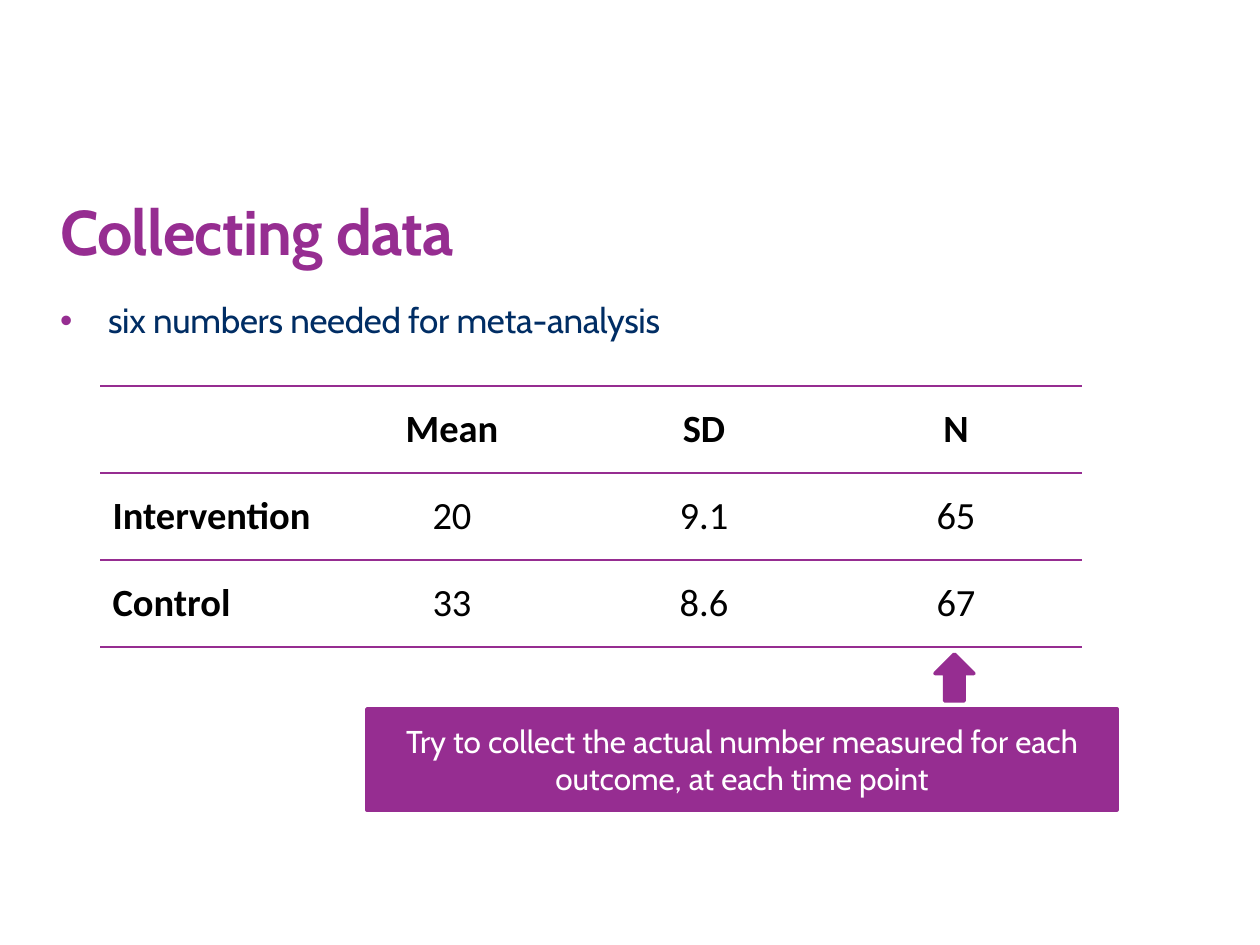
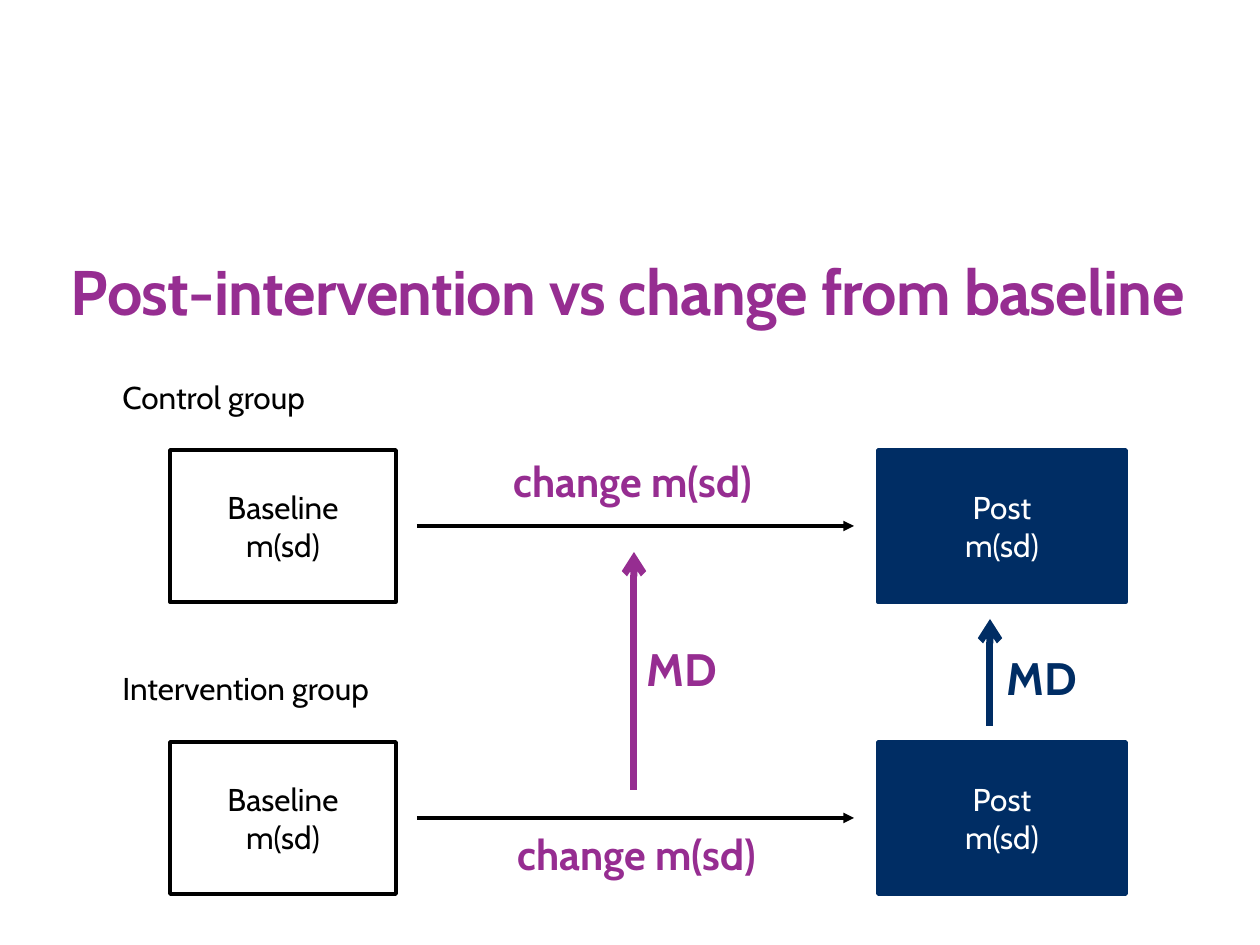
import dataclasses

import pptx
import pptx.dml.color
import pptx.enum.shapes
import pptx.enum.text
import pptx.oxml
import pptx.oxml.ns
import pptx.util

SHAPE = pptx.enum.shapes.MSO_SHAPE
ALIGN = pptx.enum.text.PP_ALIGN
ANCHOR = pptx.enum.text.MSO_ANCHOR
PLAIN_TABLE_STYLE = "{2D5ABB26-0587-4C30-8999-92F81FD0307C}"


# Shared look of both slides
@dataclasses.dataclass(frozen=True)
class Theme:
    purple: str = "962D91"
    navy: str = "002D64"
    black: str = "000000"
    white: str = "FFFFFF"
    font: str = "Cabin"
    table_font: str = "Calibri"
    title_size: int = 36
    md_size: int = 26
    change_size: int = 24
    table_size: int = 22
    list_size: int = 20
    label_size: int = 18


THEME = Theme()


# Units and XML helpers
def px(count):
    return pptx.util.Emu(round(count * 914400 / 126))


def rgb(color):
    return pptx.dml.color.RGBColor.from_string(color)


def element(tag, inner="", **attributes):
    listed = "".join(f' {name}="{value}"' for name, value in attributes.items())
    namespace = pptx.oxml.ns.nsdecls("a")
    return pptx.oxml.parse_xml(f"<a:{tag} {namespace}{listed}>{inner}</a:{tag}>")


# Text
def add_span(para, text, size, color, bold=False, font=THEME.font, spacing=0):
    span = para.add_run()
    span.text = text
    span.font.name = font
    span.font.size = pptx.util.Pt(size)
    span.font.bold = bold
    span.font.color.rgb = rgb(color)
    if spacing:
        span.font._element.set("spc", str(spacing))


def place_frame(holder, area, anchor):
    """Move a placeholder and clear its insets; give back its first paragraph."""
    holder.left, holder.top, holder.width, holder.height = map(px, area)
    frame = holder.text_frame
    frame.margin_left = frame.margin_right = frame.margin_top = frame.margin_bottom = 0
    frame.auto_size = pptx.enum.text.MSO_AUTO_SIZE.NONE
    frame.vertical_anchor = anchor
    para = frame.paragraphs[0]
    para.alignment = ALIGN.LEFT
    para.space_before = pptx.util.Pt(0)
    return para


def set_title(page, text, area):
    para = place_frame(page.shapes.title, area, ANCHOR.BOTTOM)
    add_span(para, text, THEME.title_size, THEME.purple, bold=True, spacing=-40)


def set_bullet(page, text, area):
    para = place_frame(page.placeholders[1], area, ANCHOR.TOP)
    properties = para._p.get_or_add_pPr()
    properties.set("marL", str(px(48)))
    properties.set("indent", str(-px(48)))
    properties.append(element("buClr", f'<a:srgbClr val="{THEME.purple}"/>'))
    properties.append(element("buFont", typeface="Arial"))
    properties.append(element("buChar", char="•"))
    add_span(para, text, THEME.list_size, THEME.navy, spacing=-20)


def add_label(page, text, area, size, color, bold=False):
    box = page.shapes.add_textbox(*map(px, area))
    box.text_frame.word_wrap = True
    add_span(box.text_frame.paragraphs[0], text, size, color, bold)


# Shapes and arrows
def add_block(page, kind, area, line, fill=None, lines=(), text_color=THEME.white):
    block = page.shapes.add_shape(kind, *map(px, area))
    block.shadow.inherit = False
    if fill:
        block.fill.solid()
        block.fill.fore_color.rgb = rgb(fill)
    else:
        block.fill.background()
    block.line.color.rgb = rgb(line)
    block.line.width = pptx.util.Pt(2)
    frame = block.text_frame
    frame.word_wrap = True
    frame.vertical_anchor = ANCHOR.MIDDLE
    for number, text in enumerate(lines):
        para = frame.add_paragraph() if number else frame.paragraphs[0]
        para.alignment = ALIGN.CENTER
        add_span(para, text, THEME.label_size, text_color)


def add_arrow(page, start, end, color, width, head):
    arrow = page.shapes.add_connector(
        pptx.enum.shapes.MSO_CONNECTOR.STRAIGHT, *map(px, start + end))
    arrow.line.color.rgb = rgb(color)
    arrow.line.width = pptx.util.Pt(width)
    arrow.line._get_or_add_ln().append(element("tailEnd", type=head))
    arrow._element.spPr.append(element("effectLst"))


# Table
def add_rule(cell, side):
    color = f'<a:solidFill><a:srgbClr val="{THEME.purple}"/></a:solidFill>'
    cell._tc.get_or_add_tcPr().append(element(side, color, w=pptx.util.Pt(1)))


def add_data_table(page, rows, left, top, widths, row_height):
    area = left, top, sum(widths), row_height * len(rows)
    table = page.shapes.add_table(len(rows), len(widths), *map(px, area)).table
    table.first_row = table.horz_banding = False
    table._tbl.tblPr.find(pptx.oxml.ns.qn("a:tableStyleId")).text = PLAIN_TABLE_STYLE
    for column, width in zip(table.columns, widths):
        column.width = px(width)
    for row_number, values in enumerate(rows):
        table.rows[row_number].height = px(row_height)
        for column_number, text in enumerate(values):
            cell = table.cell(row_number, column_number)
            if row_number < 2:
                add_rule(cell, "lnT")
            if row_number in (0, len(rows) - 1):
                add_rule(cell, "lnB")
            cell.fill.background()
            cell.vertical_anchor = ANCHOR.MIDDLE
            if text:
                para = cell.text_frame.paragraphs[0]
                para.alignment = ALIGN.CENTER if column_number else ALIGN.LEFT
                heading = row_number == 0 or column_number == 0
                add_span(para, text, THEME.table_size, THEME.black, heading,
                         THEME.table_font)


# Slides
def build_collecting_data(deck):
    page = deck.slides.add_slide(deck.slide_layouts[1])
    set_title(page, "Collecting data", (60, 181, 843, 87))
    set_bullet(page, "six numbers needed for meta-analysis", (60, 299, 843, 55))
    rows = [
        ("", "Mean", "SD", "N"),
        ("Intervention", "20", "9.1", "65"),
        ("Control", "33", "8.6", "67"),
    ]
    add_data_table(page, rows, 100, 386, (226, 252, 252, 252), 87)
    advice = ("Try to collect the actual number measured for each outcome, "
              "at each time point")
    add_block(page, SHAPE.RECTANGLE, (367, 709, 750, 101), THEME.purple,
              THEME.purple, [advice])
    add_block(page, SHAPE.UP_ARROW, (935, 654, 39, 47), THEME.purple, THEME.purple)


def build_change_comparison(deck):
    page = deck.slides.add_slide(deck.slide_layouts[5])
    set_title(page, "Post-intervention vs change from baseline", (71, 241, 1126, 87))

    # One row per group: label, baseline box, change arrow, post box
    groups = [
        ("Control group", 372, 450, (501, 449)),
        ("Intervention group", 663, 742, (505, 822)),
    ]
    for name, label_top, box_top, (change_left, change_top) in groups:
        add_label(page, name, (110, label_top, 372, 77), THEME.label_size, THEME.black)
        add_block(page, SHAPE.FLOWCHART_PROCESS, (170, box_top, 226, 152), THEME.black,
                  lines=("Baseline", "m(sd)"), text_color=THEME.black)
        add_block(page, SHAPE.FLOWCHART_PROCESS, (878, box_top, 248, 152), THEME.navy,
                  THEME.navy, ("Post", "m(sd)"))
        middle = box_top + 76
        add_arrow(page, (417, middle), (854, middle), THEME.black, 2, "triangle")
        add_label(page, "change m(sd)", (change_left, change_top, 285, 77),
                  THEME.change_size, THEME.purple, bold=True)

    # Mean differences between the two groups
    differences = [
        (634, 790, 552, (634, 635), THEME.purple),
        (990, 726, 619, (994, 644), THEME.navy),
    ]
    for across, start, end, corner, color in differences:
        add_arrow(page, (across, start), (across, end), color, 4, "arrow")
        add_label(page, "MD", corner + (112, 77), THEME.md_size, color, bold=True)


def main():
    deck = pptx.Presentation()
    deck.slide_width, deck.slide_height = px(1260), px(945)
    build_collecting_data(deck)
    build_change_comparison(deck)
    deck.save("out.pptx")


if __name__ == "__main__":
    main()
